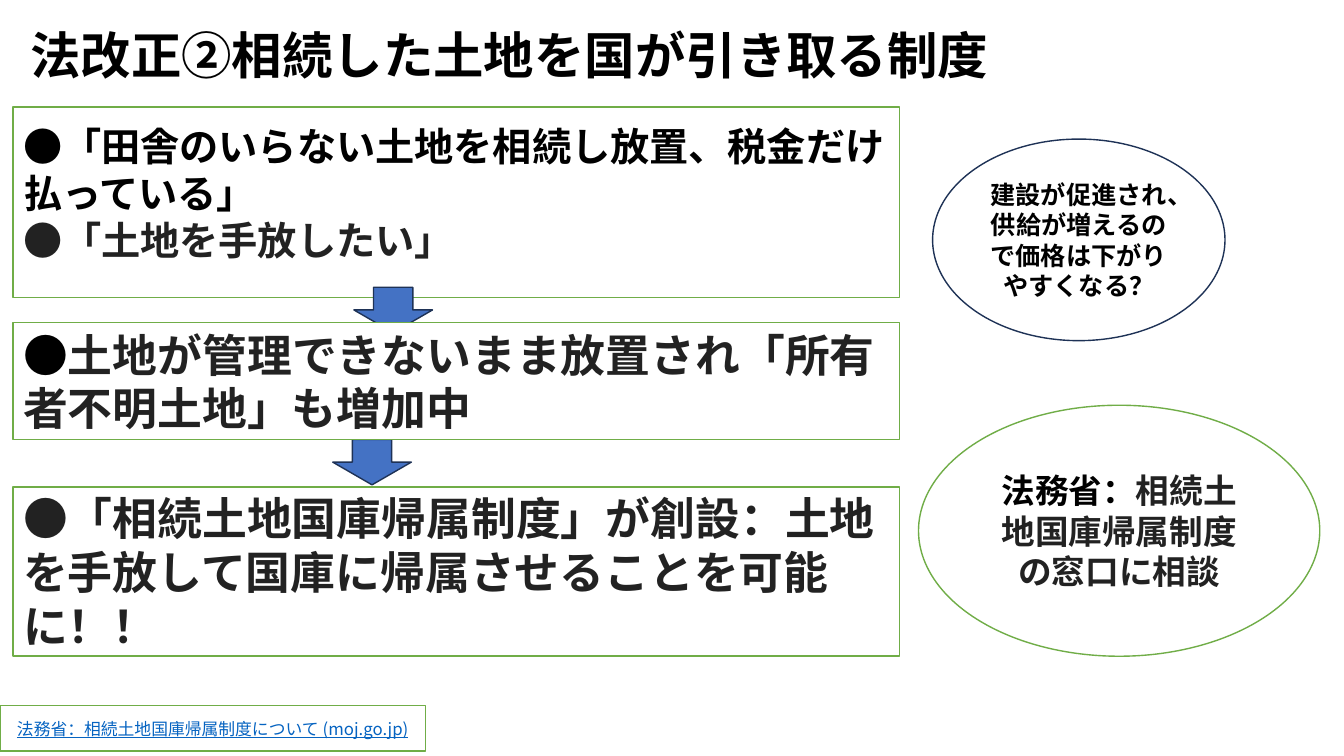
from pptx import Presentation
from pptx.dml.color import RGBColor
from pptx.enum.shapes import MSO_SHAPE
from pptx.enum.text import MSO_ANCHOR, MSO_AUTO_SIZE, PP_ALIGN
from pptx.oxml.ns import qn
from pptx.util import Inches, Pt
from lxml import etree

RECT, OVAL, DOWN = MSO_SHAPE.RECTANGLE, MSO_SHAPE.OVAL, MSO_SHAPE.DOWN_ARROW
TOP, MIDDLE = MSO_ANCHOR.TOP, MSO_ANCHOR.MIDDLE
LEFT, CENTER = PP_ALIGN.LEFT, PP_ALIGN.CENTER
FONT = "Noto Sans CJK JP"
WHITE, BLACK, DARK = "FFFFFF", "000000", "222222"
GREEN, NAVY, BLUE, LINK = "70AD47", "1E3256", "4472C4", "0563C1"


def paint(target, color):
    target.rgb = RGBColor.from_string(color)


def style(run, name, size, color, bold=True):
    font = run.font
    font.name, font.size, font.bold = name, Pt(size), bold
    paint(font.color, color)
    east = etree.SubElement(run._r.get_or_add_rPr(), qn("a:ea"))
    east.set("typeface", name)


deck = Presentation()
deck.slide_width, deck.slide_height = Inches(13.33), Inches(7.5)
slide = deck.slides.add_slide(deck.slide_layouts[5])

# Title
title = slide.shapes.title
title.left, title.top = Inches(0.2), Inches(0.11)
title.width, title.height = Inches(10.83), Inches(0.93)
frame = title.text_frame
frame.text = "法改正②相続した土地を国が引き取る制度"
frame.auto_size = MSO_AUTO_SIZE.NONE
frame.vertical_anchor = MIDDLE
frame.paragraphs[0].alignment = LEFT
frame.paragraphs[0].line_spacing = 0.9
style(frame.paragraphs[0].runs[0], "Arial", 36, BLACK)

# Shapes from back to front: kind, place, fill, line, size, align, paragraphs of runs
items = [
    (RECT, (0.13, 1.06, 8.79, 1.89), WHITE, GREEN, 28, LEFT,
     [[("●「田舎のいらない土地を相続し放置、税金だけ払っている」", BLACK)],
      [("●「土地を手放したい」", DARK)]]),
    (RECT, (0, 7, 4.22, 0.45), WHITE, GREEN, 12, CENTER,
     [[("法務省：相続土地国庫帰属制度について (moj.go.jp)", LINK)]]),
    (DOWN, (3.51, 2.85, 0.78, 0.45), BLUE, NAVY, 18, CENTER, []),
    (DOWN, (3.3, 4.36, 0.78, 0.45), BLUE, NAVY, 18, CENTER, []),
    (RECT, (0.13, 4.83, 8.79, 1.68), WHITE, GREEN, 32, LEFT,
     [[("●「相続土地国庫帰属制度」が創設：土地を手放して国庫に帰属させることを可能に！！", DARK)]]),
    (RECT, (0.13, 3.2, 8.79, 1.16), WHITE, GREEN, 32, LEFT,
     [[("●", BLACK), ("土地が管理できないまま放置され「所有者不明土地」も増加中", DARK)]]),
    (OVAL, (9.25, 1.38, 2.9, 2), WHITE, NAVY, 18, CENTER,
     [[("建設が促進され、供給が増えるので価格は下がりやすくなる？", BLACK)]]),
    (OVAL, (9.11, 4.02, 3.98, 2.49), WHITE, GREEN, 24, CENTER,
     [[("法務省：", BLACK), ("相続土地国庫帰属制度の窓口に相談", DARK)]]),
]
for kind, place, fill, line, size, align, paras in items:
    shape = slide.shapes.add_shape(kind, *map(Inches, place))
    shape.shadow.inherit = False
    shape.fill.solid()
    paint(shape.fill.fore_color, fill)
    paint(shape.line.color, line)
    shape.line.width = Pt(1)
    frame = shape.text_frame
    frame.word_wrap = True
    frame.vertical_anchor = MIDDLE
    if len(paras) > 1:
        frame.vertical_anchor = TOP
        frame.margin_top = Inches(0.15)
    for i, runs in enumerate(paras):
        para = frame.add_paragraph() if i else frame.paragraphs[0]
        para.alignment = align
        para.line_spacing = Pt(size * 1.2)
        for text, color in runs:
            run = para.add_run()
            run.text = text
            style(run, FONT, size, color, color != LINK)
            run.font.underline = color == LINK

deck.save("out.pptx")
